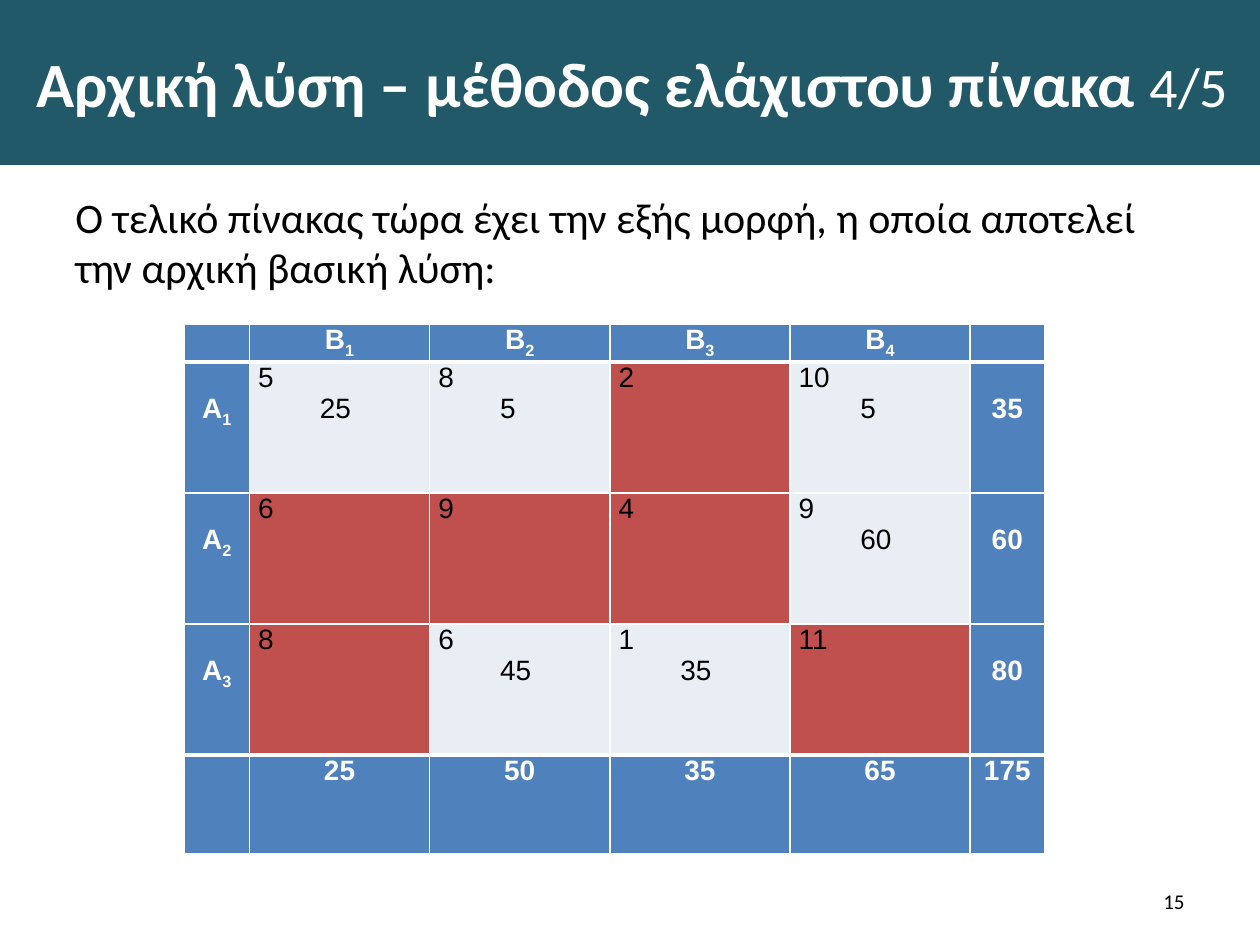
"""Build the slide with the initial transportation solution table."""
from lxml import etree
from pptx import Presentation
from pptx.dml.color import RGBColor
from pptx.enum.shapes import MSO_SHAPE
from pptx.enum.text import MSO_ANCHOR, PP_ALIGN
from pptx.oxml.ns import qn
from pptx.util import Inches, Pt

RECTANGLE = MSO_SHAPE.RECTANGLE
MIDDLE = MSO_ANCHOR.MIDDLE
TOP = MSO_ANCHOR.TOP
LEFT, CENTER, RIGHT = PP_ALIGN.LEFT, PP_ALIGN.CENTER, PP_ALIGN.RIGHT

TEAL, BLUE, RED, PALE = "215968", "4F81BD", "C0504D", "E9EDF4"
WHITE, BLACK = "FFFFFF", "000000"

TITLE = "Αρχική λύση – μέθοδος ελάχιστου πίνακα "
TITLE_PART = "4/5"
INTRO = ("Ο τελικό πίνακας τώρα έχει την εξής μορφή, η οποία αποτελεί "
         "την αρχική βασική λύση:")
PAGE_NUMBER = "15"

DESTINATIONS = [("Β", "1"), ("Β", "2"), ("Β", "3"), ("Β", "4")]
SOURCES = [("Α", "1"), ("Α", "2"), ("Α", "3")]
COSTS = [[5, 8, 2, 10], [6, 9, 4, 9], [8, 6, 1, 11]]
AMOUNTS = [[25, 5, None, 5], [None, None, None, 60], [None, 45, 35, None]]
SUPPLY = [35, 60, 80]
DEMAND = [25, 50, 35, 65]
TOTAL = 175

COLUMN_WIDTHS = [0.52, 1.43, 1.43, 1.43, 1.43, 0.59]
ROW_HEIGHTS = [0.27, 1.04, 1.04, 1.04, 0.78]
LINE_HEIGHT = 0.25
AMOUNT_INDENT = 0.49


def color(value):
    return RGBColor.from_string(value)


def add_span(paragraph, text, size, shade, bold=False, font="Calibri"):
    span = paragraph.add_run()
    span.text = text
    span.font.name = font
    span.font.size = Pt(size)
    span.font.bold = bold
    span.font.color.rgb = color(shade)
    return span


def add_text_box(page, place, text, size, align, anchor):
    box = page.shapes.add_textbox(*map(Inches, place))
    box.text_frame.word_wrap = True
    box.text_frame.vertical_anchor = anchor
    paragraph = box.text_frame.paragraphs[0]
    paragraph.alignment = align
    add_span(paragraph, text, size, BLACK)


def add_title(page):
    banner = page.shapes.add_shape(RECTANGLE, 0, 0, Inches(10), Inches(1.31))
    banner.shadow.inherit = False
    banner.fill.solid()
    banner.fill.fore_color.rgb = color(TEAL)
    banner.line.fill.background()
    frame = banner.text_frame
    frame.word_wrap = True
    frame.vertical_anchor = MIDDLE
    frame.margin_left = Inches(0.29)
    paragraph = frame.paragraphs[0]
    paragraph.alignment = LEFT
    add_span(paragraph, TITLE, 36, WHITE, True)
    add_span(paragraph, TITLE_PART, 32, WHITE)


def style_cell(cell, fill, borders, top=0):
    cell.margin_left = cell.margin_right = Inches(0.07)
    cell.margin_top, cell.margin_bottom = Inches(top), 0
    properties = cell._tc.get_or_add_tcPr()
    for side, width in borders.items():
        line = etree.SubElement(properties, qn(f"a:ln{side}"), w=str(Pt(width)))
        solid = etree.SubElement(line, qn("a:solidFill"))
        etree.SubElement(solid, qn("a:srgbClr"), val=WHITE)
    cell.fill.solid()
    cell.fill.fore_color.rgb = color(fill)


def write_heading(cell, text, subscript=""):
    paragraph = cell.text_frame.paragraphs[0]
    paragraph.alignment = CENTER
    if not text:
        etree.SubElement(paragraph._p, qn("a:endParaRPr"), sz="1600")
        return
    add_span(paragraph, text, 16, WHITE, True, "Arial")
    if subscript:
        span = add_span(paragraph, subscript, 16, WHITE, True, "Arial")
        span._r.get_or_add_rPr().set("baseline", "-25000")


def write_route(cell, cost, amount):
    frame = cell.text_frame
    add_span(frame.paragraphs[0], str(cost), 16, BLACK, font="Arial")
    if amount is not None:
        paragraph = frame.add_paragraph()
        indent = str(Inches(AMOUNT_INDENT))
        paragraph._p.get_or_add_pPr().set("marL", indent)
        add_span(paragraph, str(amount), 16, BLACK, font="Arial")


def add_transport_table(page):
    last_row, last_column = len(ROW_HEIGHTS) - 1, len(COLUMN_WIDTHS) - 1
    frame = page.shapes.add_table(
        len(ROW_HEIGHTS), len(COLUMN_WIDTHS), Inches(1.46), Inches(2.57),
        Inches(sum(COLUMN_WIDTHS)), Inches(sum(ROW_HEIGHTS)))
    table = frame.table
    for column, width in zip(table.columns, COLUMN_WIDTHS):
        column.width = Inches(width)
    for row, height in zip(table.rows, ROW_HEIGHTS):
        row.height = Inches(height)

    headings = {(0, 0): ("",), (0, last_column): ("",), (last_row, 0): ("",),
                (last_row, last_column): (str(TOTAL),)}
    for index, (label, demand) in enumerate(zip(DESTINATIONS, DEMAND), 1):
        headings[0, index] = label
        headings[last_row, index] = (str(demand),)
    for index, (label, supply) in enumerate(zip(SOURCES, SUPPLY), 1):
        headings[index, 0] = label
        headings[index, last_column] = (str(supply),)

    for row in range(last_row + 1):
        borders = {"L": 1, "R": 1,
                   "T": 3 if row in (1, last_row) else 1,
                   "B": 3 if row in (0, last_row - 1) else 1}
        for column in range(last_column + 1):
            cell = table.cell(row, column)
            if (row, column) in headings:
                top = LINE_HEIGHT if 0 < row < last_row else 0
                style_cell(cell, BLUE, borders, top)
                write_heading(cell, *headings[row, column])
            else:
                amount = AMOUNTS[row - 1][column - 1]
                style_cell(cell, RED if amount is None else PALE, borders)
                write_route(cell, COSTS[row - 1][column - 1], amount)


def main():
    deck = Presentation()
    deck.slide_width, deck.slide_height = Inches(10), Inches(7.5)
    page = deck.slides.add_slide(deck.slide_layouts[6])
    add_title(page)
    add_text_box(page, (0.5, 1.47, 9, 0.94), INTRO, 24, LEFT, TOP)
    add_text_box(page, (7.17, 6.95, 2.33, 0.4), PAGE_NUMBER, 12, RIGHT, MIDDLE)
    add_transport_table(page)
    deck.save("out.pptx")


if __name__ == "__main__":
    main()
